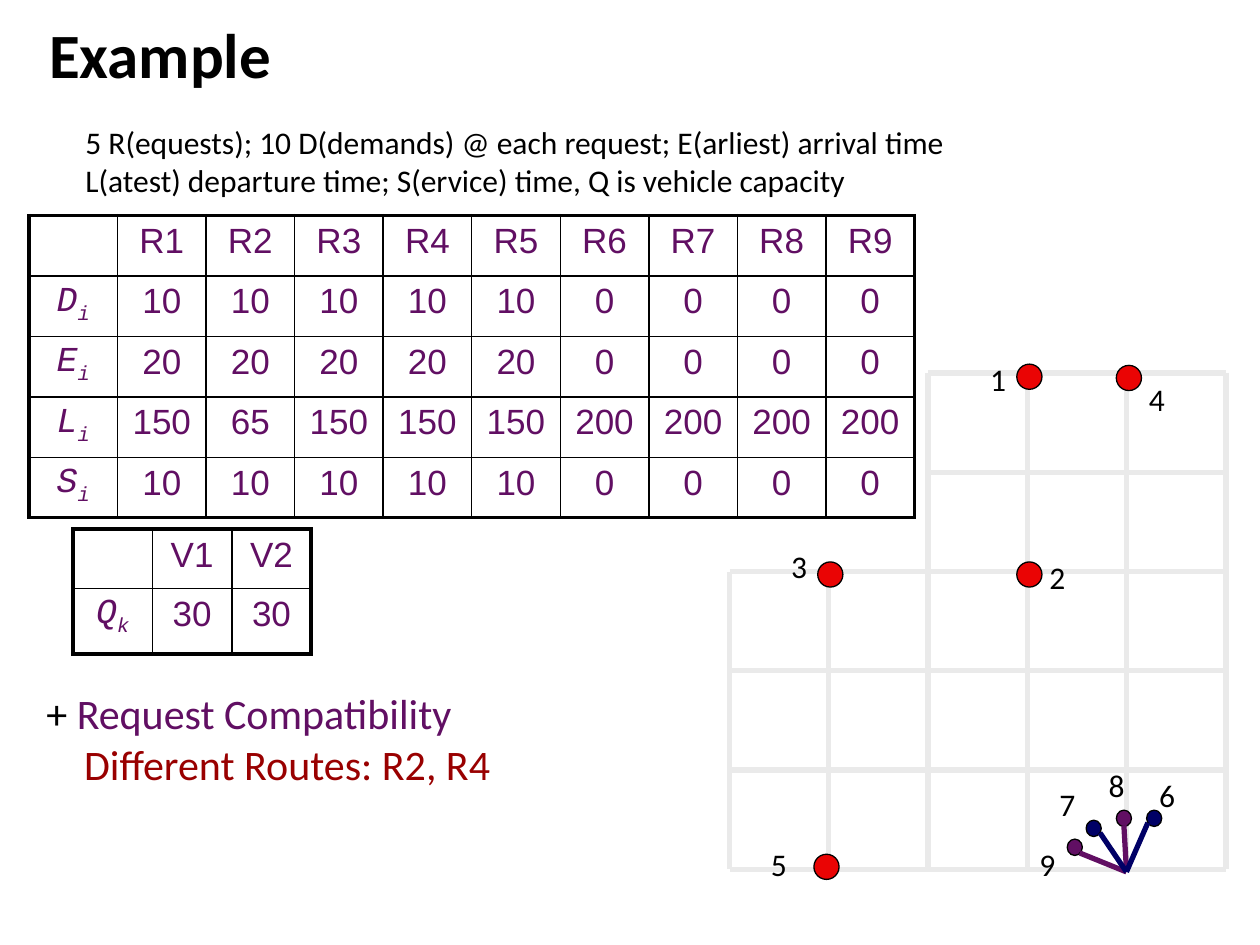
"""Build the vehicle routing example slide with its data tables and request map."""
from lxml import etree
from pptx import Presentation
from pptx.dml.color import RGBColor
from pptx.enum.shapes import MSO_CONNECTOR, MSO_SHAPE
from pptx.enum.text import MSO_AUTO_SIZE, PP_ALIGN
from pptx.oxml.ns import qn
from pptx.util import Inches, Pt

STRAIGHT = MSO_CONNECTOR.STRAIGHT
OVAL = MSO_SHAPE.OVAL
FIT_SHAPE = MSO_AUTO_SIZE.SHAPE_TO_FIT_TEXT
LEFT, CENTER = PP_ALIGN.LEFT, PP_ALIGN.CENTER
BLACK, PURPLE, NAVY = "000000", "610F63", "000066"
RED, DARK_RED, GRAY = "EA0404", "990000", "EAEAEA"


def rgb(value):
    """Turn a hex string into a colour."""
    return RGBColor.from_string(value)


def write(para, text, color, **formats):
    """Add a formatted run to a paragraph."""
    span = para.add_run()
    span.text = text
    for name, value in formats.items():
        setattr(span.font, name, value)
    span.font.color.rgb = rgb(color)
    return span


deck = Presentation()
deck.slide_width, deck.slide_height = Inches(10), Inches(7.5)
page = deck.slides.add_slide(deck.slide_layouts[5])

title = page.shapes.title
title.left, title.top = Inches(0.39), Inches(0.11)
title.width, title.height = Inches(7.68), Inches(0.63)
for side in ("left", "top", "right", "bottom"):
    setattr(title.text_frame, f"margin_{side}", 0)
heading = title.text_frame.paragraphs[0]
heading.alignment = LEFT
write(heading, "Example", BLACK, size=Pt(36), name="Calibri", bold=True)

grid_left, grid_top, step = 5.79, 2.96, 0.788
xs = [grid_left + step * i for i in range(6)]
ys = [grid_top + step * i for i in range(6)]
grid_lines = [(xs[0] if i > 1 else xs[2], y, xs[5], y, GRAY) for i, y in enumerate(ys)]
grid_lines += [(x, ys[0] if i > 1 else ys[2], x, ys[5], GRAY) for i, x in enumerate(xs)]
depot_lines = [
    (8.57, 6.77, 8.94, 6.92, PURPLE),
    (8.92, 6.55, 8.94, 6.9, PURPLE),
    (8.73, 6.61, 8.94, 6.92, NAVY),
    (9.11, 6.53, 8.94, 6.92, NAVY),
]
request_dots = [(x, y, 0.2, 0.2, RED) for x, y in
                [(6.49, 4.46), (6.46, 6.78), (8.07, 2.89), (8.86, 2.9), (8.07, 4.46)]]
depot_dots = [(x, y, 0.12, 0.13, color) for x, y, color in
              [(8.47, 6.66, PURPLE), (8.62, 6.51, NAVY), (9.1, 6.43, NAVY), (8.86, 6.43, PURPLE)]]

for lines, dots in ((grid_lines, request_dots + depot_dots), (depot_lines, [])):
    for x1, y1, x2, y2, color in lines:
        line = page.shapes.add_connector(STRAIGHT, Inches(x1), Inches(y1), Inches(x2), Inches(y2))
        line.line.color.rgb = rgb(color)
        line.line.width = Pt(3)
        etree.SubElement(line._element.spPr, qn("a:effectLst"))
    for x, y, width, height, color in dots:
        dot = page.shapes.add_shape(OVAL, Inches(x), Inches(y), Inches(width), Inches(height))
        dot.shadow.inherit = False
        dot.fill.solid()
        dot.fill.fore_color.rgb = rgb(color)
        dot.line.color.rgb = rgb(BLACK)
        dot.line.width = Pt(0.75)

request_rows = [
    ["", *(f"R{i}" for i in range(1, 10))],
    ["Di"] + ["10"] * 5 + ["0"] * 4,
    ["Ei"] + ["20"] * 5 + ["0"] * 4,
    ["Li", "150", "65"] + ["150"] * 3 + ["200"] * 4,
    ["Si"] + ["10"] * 5 + ["0"] * 4,
]
vehicle_rows = [["", "V1", "V2"], ["Qk", "30", "30"]]
tables = [
    (0.23, 1.71, 7.03, [0.48] * 5, request_rows),
    (0.58, 4.2, 1.89, [0.47, 0.52], vehicle_rows),
]
for left, top, width, heights, rows in tables:
    row_count, column_count = len(rows), len(rows[0])
    table = page.shapes.add_table(row_count, column_count, Inches(left), Inches(top),
                                  Inches(width), Inches(sum(heights))).table
    table.first_row = table.horz_banding = False
    for r, values in enumerate(rows):
        table.rows[r].height = Inches(heights[r])
        for c, value in enumerate(values):
            cell = table.cell(r, c)
            outer_sides = {"L": c == 0, "R": c == column_count - 1,
                           "T": r == 0, "B": r == row_count - 1}
            for side, outer in outer_sides.items():
                border = etree.SubElement(cell._tc.get_or_add_tcPr(), qn(f"a:ln{side}"),
                                          w=str(Pt(2.25 if outer else 1)))
                paint = etree.SubElement(border, qn("a:solidFill"))
                etree.SubElement(paint, qn("a:srgbClr"), val=BLACK)
            cell.fill.background()
            para = cell.text_frame.paragraphs[0]
            para.alignment = CENTER
            para.font.size = Pt(20)
            if c == 0 and value:
                symbol = {"size": Pt(20), "name": "Courier New", "italic": True}
                write(para, value[0], PURPLE, **symbol)
                index = write(para, value[1], PURPLE, **symbol)
                index.font._element.set("baseline", "-25000")
            elif value:
                write(para, value, PURPLE, size=Pt(20), name="Arial")

request_labels = [("3", 6.18, 4.29), ("5", 6.02, 6.66), ("2", 8.23, 4.38),
                  ("4", 9.02, 2.97), ("1", 7.76, 2.81)]
depot_labels = [("9", 8.15, 6.66), ("7", 8.31, 6.18), ("8", 8.7, 6.03), ("6", 9.1, 6.11)]
texts = [(x, y, 0.39, 0.4, 18, [[(label, BLACK)]]) for label, x, y in request_labels]
texts += [(x, y, 0.32, 0.4, 18, [[(label, BLACK)]]) for label, x, y in depot_labels]
texts += [
    (0.27, 5.41, 5.04, 1.1, 24, [
        [("+ ", BLACK), ("Request Compatibility", PURPLE)],
        [("Different Routes: R2, R4", DARK_RED)],
    ]),
    (0.58, 0.93, 7.56, 1.01, 18, [
        [("5 R(equests); 10 D(demands) @ each request; E(arliest) arrival time", BLACK)],
        [("L(atest) departure time; S(ervice) time, Q is vehicle capacity", BLACK)],
    ]),
]
for x, y, width, height, size, paragraphs in texts:
    box = page.shapes.add_textbox(Inches(x), Inches(y), Inches(width), Inches(height))
    frame = box.text_frame
    frame.word_wrap = True
    frame.auto_size = FIT_SHAPE
    for number, spans in enumerate(paragraphs):
        para = frame.add_paragraph() if number else frame.paragraphs[0]
        if spans[0][1] == DARK_RED:
            para._p.get_or_add_pPr().set("marL", str(Inches(0.3)))
        for text, color in spans:
            write(para, text, color, size=Pt(size), name="Calibri")

deck.save("out.pptx")
